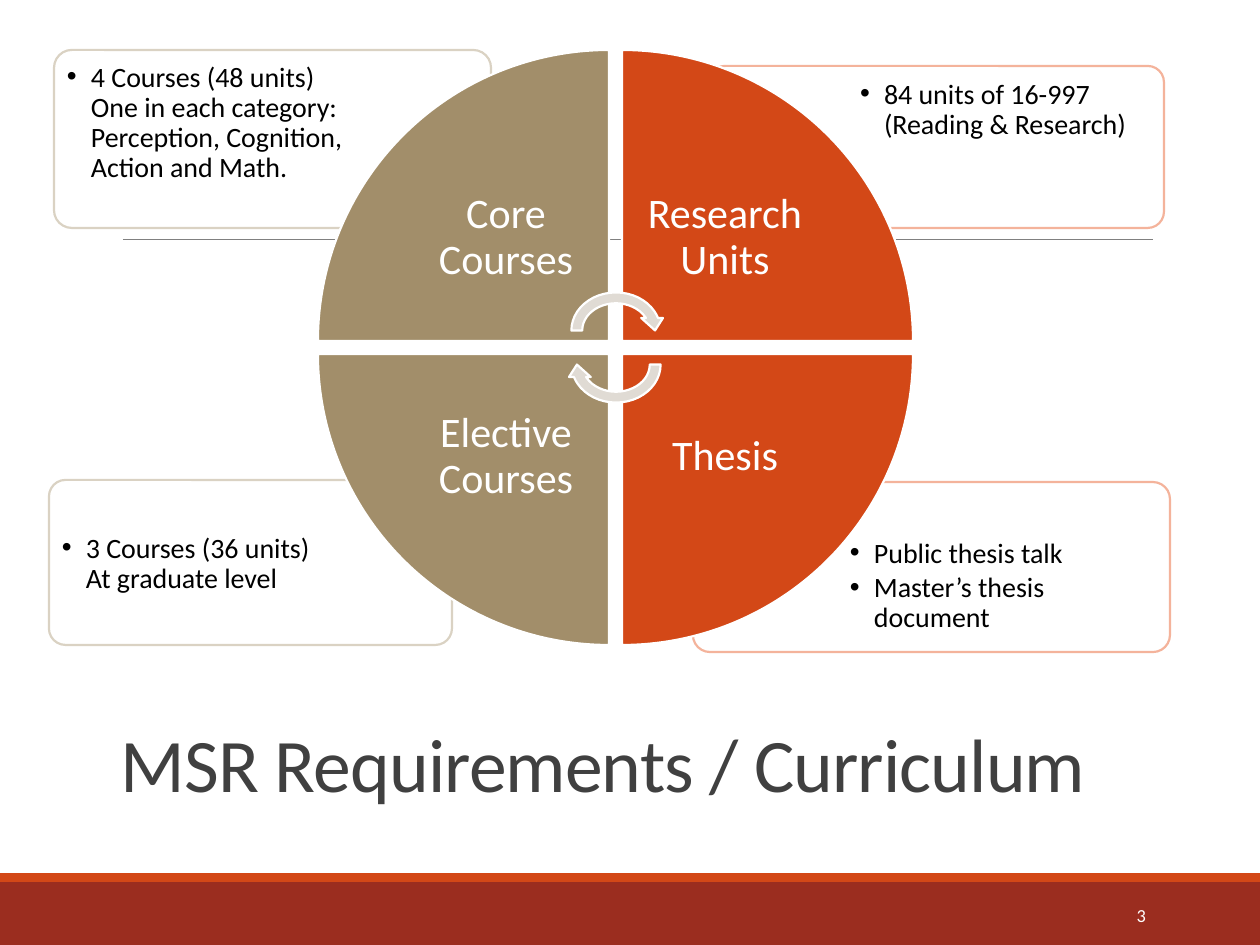
from copy import deepcopy

from lxml.etree import SubElement
from pptx import Presentation
from pptx.dml.color import RGBColor
from pptx.enum.shapes import MSO_CONNECTOR, MSO_SHAPE
from pptx.enum.text import MSO_ANCHOR, PP_ALIGN
from pptx.oxml.ns import qn
from pptx.util import Emu, Pt

SCALE = 914400 / 126
WIDTH, HEIGHT = 1260, 945

WHITE = RGBColor(0xFF, 0xFF, 0xFF)
BLACK = RGBColor(0x00, 0x00, 0x00)
CHARCOAL = RGBColor(0x40, 0x40, 0x40)
GRAY = RGBColor(0x80, 0x80, 0x80)
BRICK = RGBColor(0x9B, 0x2D, 0x1F)
ORANGE = RGBColor(0xD3, 0x48, 0x17)
TAN = RGBColor(0xA2, 0x8E, 0x6A)
PALE_ORANGE = RGBColor(0xF4, 0xB3, 0x9B)
PALE_TAN = RGBColor(0xDA, 0xD2, 0xC3)
ARROW_GRAY = RGBColor(0xE0, 0xDB, 0xD4)

TITLE = "MSR Requirements / Curriculum"
PAGE_NUMBER = "3"

# A \v is a line break inside a paragraph.
# card frame, card line, text frame, text inset, bullets
CARDS = [
    ((693, 482, 477, 170), PALE_ORANGE, (839, 528, 326, 120), 11,
     ["Public thesis talk", "Master’s thesis document"]),
    ((49, 480, 403, 165), PALE_TAN, (53, 525, 275, 117), 9,
     ["3 Courses (36 units)\vAt graduate level"]),
    ((709, 66, 455, 162), PALE_ORANGE, (849, 69, 311, 115), 11,
     ["84 units of 16-997\v(Reading & Research)"]),
    ((54, 50, 437, 178), PALE_TAN, (58, 54, 297, 126), 9,
     ["4 Courses (48 units)\vOne in each category:\v"
      "Perception, Cognition, Action and Math."]),
]

# label, column, row, fill; clockwise from the top left
WEDGES = [
    ("Core\vCourses", 0, 0, TAN),
    ("Research Units", 1, 0, ORANGE),
    ("Thesis", 1, 1, ORANGE),
    ("Elective\vCourses", 0, 1, TAN),
]
WHEEL_LEFT, WHEEL_TOP = 318, 50
WEDGE, STEP, LABEL = 291, 304, 206

ARROWS = [(287, 0), (321, 180)]  # top, rotation
INDENT = 24


def px(value):
    return Emu(round(value * SCALE))


def add_shape(page, kind, frame, fill, line=None, rotation=0):
    shape = page.shapes.add_shape(kind, *map(px, frame))
    shape.shadow.inherit = False
    shape.rotation = rotation
    shape.fill.solid()
    shape.fill.fore_color.rgb = fill
    if line is None:
        shape.line.fill.background()
    else:
        shape.line.color.rgb = line
        shape.line.width = Pt(1.25)
    return shape


def add_bullet(paragraph):
    properties = paragraph._p.get_or_add_pPr()
    properties.set("marL", str(px(INDENT)))
    properties.set("indent", str(px(-INDENT)))
    SubElement(properties, qn("a:buFont"), typeface="Arial")
    SubElement(properties, qn("a:buChar"), char="•")


def add_text(page, frame, texts, size, color, insets=(13, 6), bullets=False,
             anchor=MSO_ANCHOR.TOP, spacing=None, **paragraph_format):
    """Add a text box; insets are horizontal and vertical, in px."""
    box = page.shapes.add_textbox(*map(px, frame))
    body = box.text_frame
    body.word_wrap = True
    body.vertical_anchor = anchor
    body.margin_left = body.margin_right = px(insets[0])
    body.margin_top = body.margin_bottom = px(insets[1])
    for index, text in enumerate(texts):
        paragraph = body.add_paragraph() if index else body.paragraphs[0]
        paragraph.text = text
        if bullets:
            add_bullet(paragraph)
        for name, value in paragraph_format.items():
            setattr(paragraph, name, value)
        for span in paragraph.runs:
            span.font.name, span.font.size = "Calibri", Pt(size)
            span.font.color.rgb = color
            if spacing is not None:
                span.font._element.set("spc", str(spacing))
        # Line breaks carry the same format, so that line heights agree
        for line_break in paragraph._p.findall(qn("a:br")):
            line_break.append(deepcopy(paragraph.runs[0].font._element))


def add_master_parts(page):
    add_shape(page, MSO_SHAPE.RECTANGLE, (0, 882, WIDTH, 63), BRICK)
    add_shape(page, MSO_SHAPE.RECTANGLE, (0, 873, WIDTH, 9), ORANGE)
    rule = page.shapes.add_connector(
        MSO_CONNECTOR.STRAIGHT, px(123), px(239), px(1153), px(239))
    rule.line.color.rgb = GRAY
    rule.line.width = Pt(0.5)
    SubElement(rule._element.spPr, qn("a:effectLst"))
    add_text(page, (108, 738, 1036, 76), [TITLE], 43.2, CHARCOAL,
             anchor=MSO_ANCHOR.BOTTOM, spacing=-50, line_spacing=0.85)
    add_text(page, (1023, 890, 136, 50), [PAGE_NUMBER], 10.5, WHITE,
             anchor=MSO_ANCHOR.MIDDLE, alignment=PP_ALIGN.RIGHT)


def add_cards(page):
    for frame, line, text_frame, inset, bullets in CARDS:
        card = add_shape(page, MSO_SHAPE.ROUNDED_RECTANGLE, frame, WHITE, line)
        card.adjustments[0] = 0.1
        color = card._element.spPr.find(qn("a:solidFill"))[0]
        SubElement(color, qn("a:alpha"), val="90000")
        add_text(page, text_frame, bullets, 16, BLACK, (inset, inset),
                 bullets=True, line_spacing=0.9, space_after=Pt(2.4))


def add_wheel(page):
    for index, (label, column, row, fill) in enumerate(WEDGES):
        left, top = WHEEL_LEFT + column * STEP, WHEEL_TOP + row * STEP
        add_shape(page, MSO_SHAPE.PIE_WEDGE, (left, top, WEDGE, WEDGE),
                  fill, WHITE, rotation=90 * index)
        # Labels sit in the corner nearest the hub
        label_left = left + (1 - column) * (WEDGE - LABEL)
        label_top = top + (1 - row) * (WEDGE - LABEL)
        add_text(page, (label_left, label_top, LABEL, LABEL), [label], 24,
                 WHITE, (24, 24), anchor=MSO_ANCHOR.MIDDLE,
                 alignment=PP_ALIGN.CENTER, line_spacing=0.9)
    for top, rotation in ARROWS:
        add_shape(page, MSO_SHAPE.CIRCULAR_ARROW, (566, top, 100, 87),
                  ARROW_GRAY, WHITE, rotation)


def main():
    deck = Presentation()
    deck.slide_width, deck.slide_height = px(WIDTH), px(HEIGHT)
    page = deck.slides.add_slide(deck.slide_layouts[6])
    add_master_parts(page)
    add_cards(page)
    add_wheel(page)
    deck.save("out.pptx")


if __name__ == "__main__":
    main()
